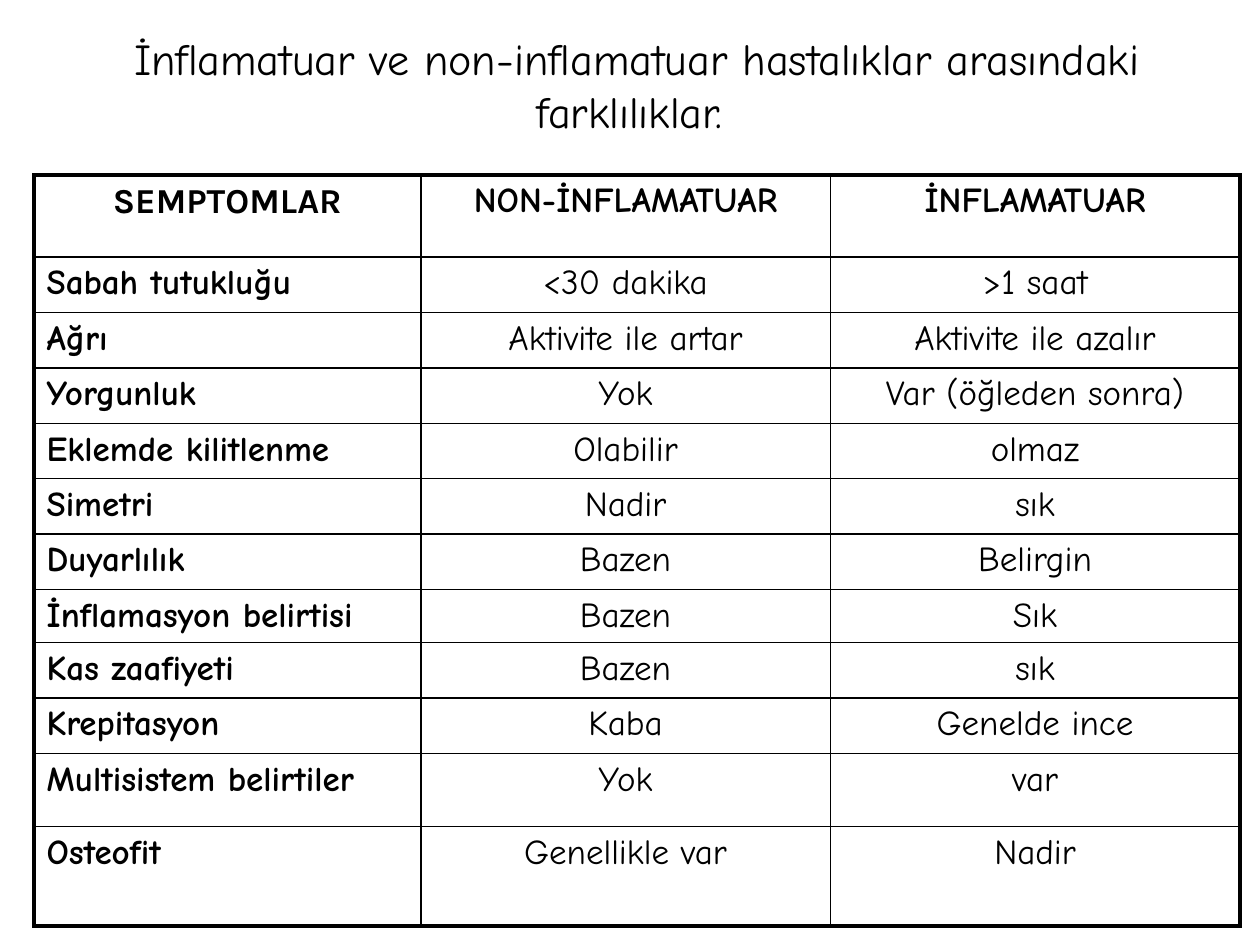
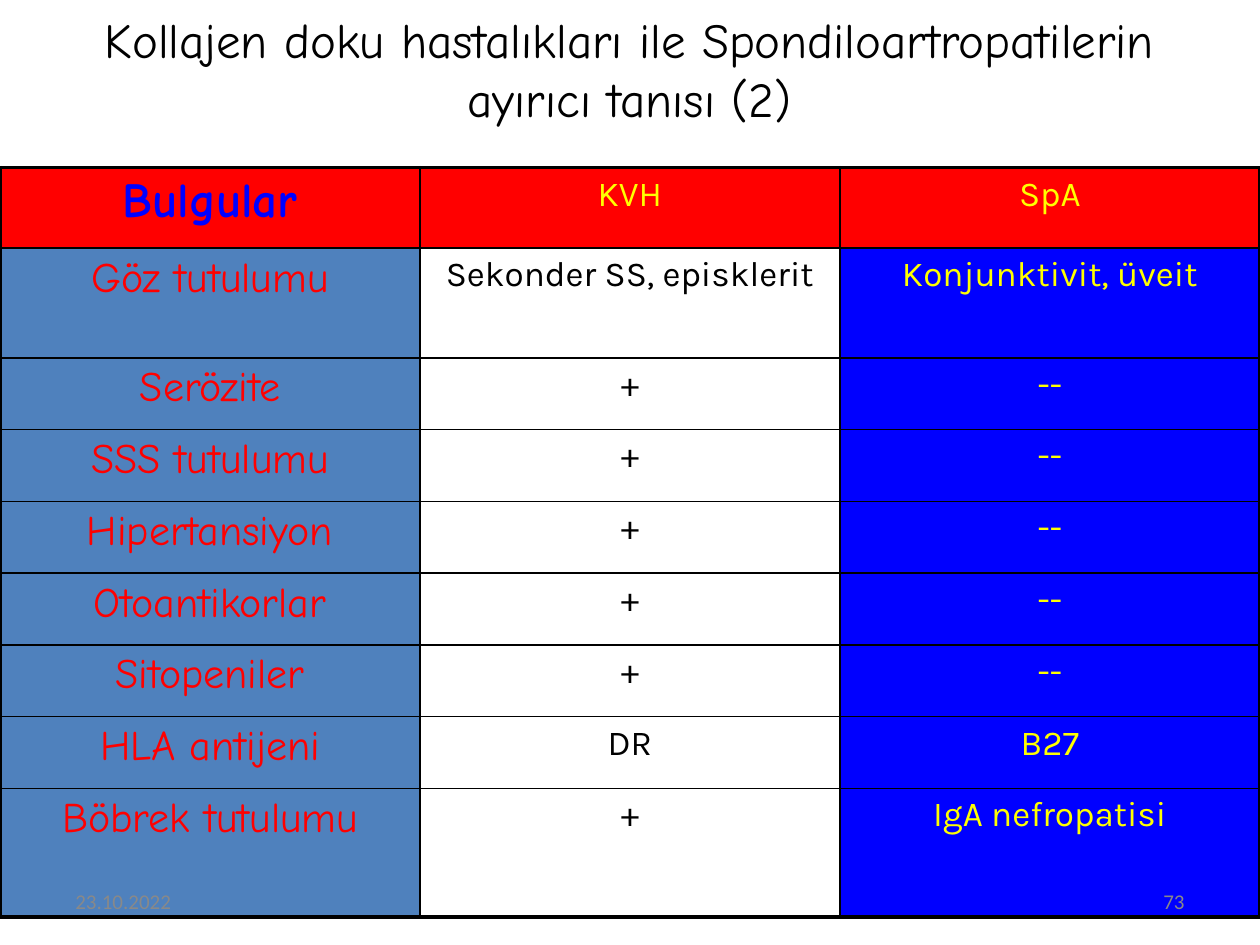
from collections import namedtuple

from lxml.etree import SubElement
from pptx import Presentation
from pptx.dml.color import RGBColor
from pptx.enum.text import MSO_ANCHOR, MSO_AUTO_SIZE, PP_ALIGN
from pptx.oxml.ns import qn
from pptx.util import Inches, Pt

BLACK = RGBColor(0x00, 0x00, 0x00)
WHITE = RGBColor(0xFF, 0xFF, 0xFF)
RED = RGBColor(0xFF, 0x00, 0x00)
BLUE = RGBColor(0x00, 0x00, 0xFF)
YELLOW = RGBColor(0xFF, 0xFF, 0x00)
STEEL = RGBColor(0x4F, 0x81, 0xBD)
GREY = RGBColor(0x89, 0x89, 0x89)

COMIC, KARLA, CALIBRI = "Comic Neue", "Karla", "Calibri"
OUTER, INNER = 2.25, 1

Look = namedtuple("Look", "font size color bold fill align",
                  defaults=(False, WHITE, PP_ALIGN.CENTER))

SYMPTOM_LOOKS = (
    Look(COMIC, 20, BLACK, True, WHITE, PP_ALIGN.JUSTIFY),
    Look(COMIC, 20, BLACK),
    Look(COMIC, 20, BLACK),
)
SYMPTOM_HEADS = (
    Look(KARLA, 20, BLACK, True),
    Look(COMIC, 20, BLACK, True),
    Look(COMIC, 20, BLACK, True),
)
FINDING_LOOKS = (
    Look(COMIC, 24, RED, fill=STEEL),
    Look(KARLA, 20, BLACK, fill=None),
    Look(KARLA, 20, YELLOW, fill=BLUE),
)
FINDING_HEADS = (
    Look(COMIC, 28, BLUE, True, RED),
    Look(KARLA, 20, YELLOW, fill=RED),
    Look(KARLA, 20, YELLOW, fill=RED),
)

SYMPTOMS = (
    ("SEMPTOMLAR", "NON-İNFLAMATUAR", "İNFLAMATUAR"),
    ("Sabah tutukluğu", "<30 dakika", ">1 saat"),
    ("Ağrı", "Aktivite ile artar", "Aktivite ile azalır"),
    ("Yorgunluk", "Yok", "Var (öğleden sonra)"),
    ("Eklemde kilitlenme", "Olabilir", "olmaz"),
    ("Simetri", "Nadir", "sık"),
    ("Duyarlılık", "Bazen", "Belirgin"),
    ("İnflamasyon belirtisi", "Bazen", "Sık"),
    ("Kas zaafiyeti", "Bazen", "sık"),
    ("Krepitasyon", "Kaba", "Genelde ince"),
    ("Multisistem belirtiler", "Yok", "var"),
    ("Osteofit", "Genellikle var", "Nadir"),
)
FINDINGS = (
    ("Bulgular", "KVH", "SpA"),
    ("Göz tutulumu", "Sekonder SS, episklerit", "Konjunktivit, üveit"),
    ("Serözite", "+", "--"),
    ("SSS tutulumu", "+", "--"),
    ("Hipertansiyon", "+", "--"),
    ("Otoantikorlar", "+", "--"),
    ("Sitopeniler", "+", "--"),
    ("HLA antijeni", "DR", "B27"),
    ("Böbrek tutulumu", "+", "IgA nefropatisi"),
)


def write(p, text, look):
    p.alignment = look.align
    r = p.add_run()
    r.text = text
    r.font.name = look.font
    r.font.size = Pt(look.size)
    r.font.bold = look.bold
    r.font.color.rgb = look.color


def add_title_slide(prs, text, box, size):
    s = prs.slides.add_slide(prs.slide_layouts[5])
    title = s.shapes.title
    title.left, title.top, title.width, title.height = map(Inches, box)
    title.fill.solid()
    title.fill.fore_color.rgb = WHITE
    title.line.color.rgb = WHITE
    title.line.width = Pt(0.75)
    tf = title.text_frame
    tf.auto_size = MSO_AUTO_SIZE.NONE
    tf.word_wrap = True
    tf.vertical_anchor = MSO_ANCHOR.MIDDLE
    write(tf.paragraphs[0], text, Look(COMIC, size, BLACK))
    return s


def set_borders(cell, widths):
    tcPr = cell._tc.get_or_add_tcPr()
    for side, width in zip("LRTB", widths):
        ln = SubElement(tcPr, qn(f"a:ln{side}"), w=str(Pt(width)))
        fill = SubElement(ln, qn("a:solidFill"))
        SubElement(fill, qn("a:srgbClr"), val=str(BLACK))


def set_space_before(p, percent):
    spacing = SubElement(p._p.get_or_add_pPr(), qn("a:spcBef"))
    SubElement(spacing, qn("a:spcPct"), val=str(percent * 1000))


def fill_cell(cell, text, look, widths):
    set_borders(cell, widths)
    if look.fill is None:
        cell.fill.background()
    else:
        cell.fill.solid()
        cell.fill.fore_color.rgb = look.fill
    p = cell.text_frame.paragraphs[0]
    set_space_before(p, 20)
    write(p, text, look)


def add_comparison(s, left, top, col_widths, row_heights, rows, heads, looks):
    last_row, last_col = len(rows) - 1, len(col_widths) - 1
    table = s.shapes.add_table(
        len(rows), len(col_widths), Inches(left), Inches(top),
        Inches(sum(col_widths)), Inches(sum(row_heights))).table
    table.first_row = table.horz_banding = False
    for column, width in zip(table.columns, col_widths):
        column.width = Inches(width)
    for i, (height, texts) in enumerate(zip(row_heights, rows)):
        table.rows[i].height = Inches(height)
        for j, (text, look) in enumerate(zip(texts, looks if i else heads)):
            at_edge = (j == 0, j == last_col, i == 0, i == last_row)
            widths = [OUTER if edge else INNER for edge in at_edge]
            fill_cell(table.cell(i, j), text, look, widths)


def add_footer(s, text, left, align):
    sp = s.shapes.add_textbox(Inches(left), Inches(6.95), Inches(2.33), Inches(0.4))
    tf = sp.text_frame
    tf.word_wrap = True
    tf.vertical_anchor = MSO_ANCHOR.MIDDLE
    write(tf.paragraphs[0], text, Look(CALIBRI, 12, GREY, align=align))


def build_symptoms(prs):
    s = add_title_slide(
        prs, "İnflamatuar ve non-inflamatuar hastalıklar arasındaki farklılıklar. ",
        (0.43, 0.21, 9.25, 0.92), 25.2)
    heights = [0.65] + [0.44] * 6 + [0.41] + [0.44] * 2 + [0.58, 0.79]
    add_comparison(s, 0.27, 1.39, (3.07, 3.25, 3.25), heights,
                   SYMPTOMS, SYMPTOM_HEADS, SYMPTOM_LOOKS)


def build_findings(prs):
    s = add_title_slide(
        prs, "Kollajen doku hastalıkları ile Spondiloartropatilerin ayırıcı tanısı (2)",
        (0.33, 0, 9.33, 1.08), 28)
    heights = [0.64, 0.87] + [0.57] * 6 + [1.02]
    add_comparison(s, 0, 1.33, [10 / 3] * 3, heights,
                   FINDINGS, FINDING_HEADS, FINDING_LOOKS)
    add_footer(s, "23.10.2022", 0.5, PP_ALIGN.LEFT)
    add_footer(s, "73", 7.17, PP_ALIGN.RIGHT)


def main():
    prs = Presentation()
    prs.slide_width, prs.slide_height = Inches(10), Inches(7.5)
    build_symptoms(prs)
    build_findings(prs)
    prs.save("out.pptx")


if __name__ == "__main__":
    main()
